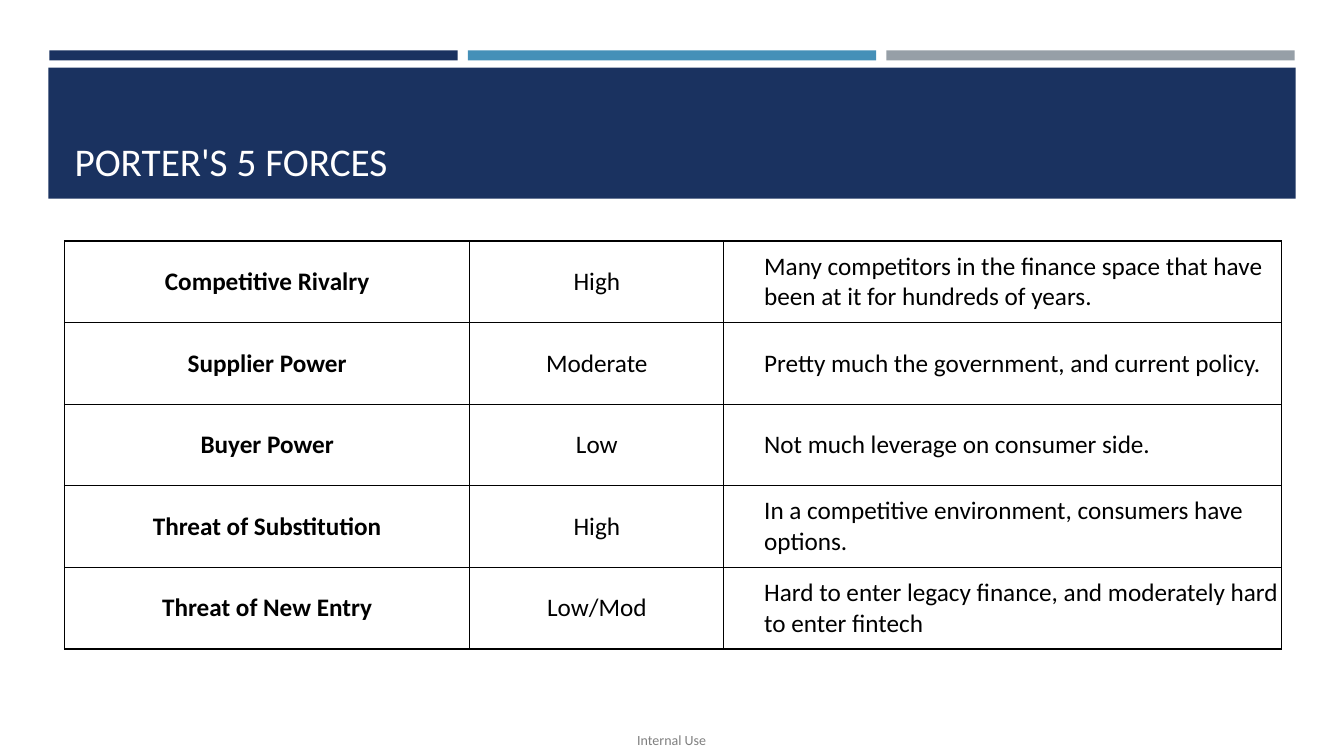
import pptx
import pptx.dml.color
import pptx.enum.shapes
import pptx.enum.text
import pptx.oxml
import pptx.oxml.ns
import pptx.util

Inches = pptx.util.Inches
RGBColor = pptx.dml.color.RGBColor
Align = pptx.enum.text.PP_ALIGN
Anchor = pptx.enum.text.MSO_ANCHOR

NAVY = RGBColor(0x1A, 0x32, 0x60)
BLUE = RGBColor(0x45, 0x90, 0xB8)
SILVER = RGBColor(0x96, 0x9F, 0xA7)
GRAY = RGBColor(0x7F, 0x7F, 0x7F)
BLACK = RGBColor(0, 0, 0)
WHITE = RGBColor(0xFF, 0xFF, 0xFF)

TITLE = "PORTER'S 5 FORCES"
FOOTER = "Internal Use"
FORCES = [
    ("Competitive Rivalry", "High",
     "Many competitors in the finance space that have been at it for hundreds of years."),
    ("Supplier Power", "Moderate", "Pretty much the government, and current policy."),
    ("Buyer Power", "Low", "Not much leverage on consumer side."),
    ("Threat of Substitution", "High",
     "In a competitive environment, consumers have options."),
    ("Threat of New Entry", "Low/Mod",
     "Hard to enter legacy finance, and moderately hard to enter fintech"),
]
# width, alignment, left margin, bold
COLUMNS = [
    (4.02, Align.CENTER, 0, True),
    (2.52, Align.CENTER, 0, False),
    (5.53, Align.LEFT, 0.4, False),
]
ROW = 0.81
STRIPES = [NAVY, BLUE, SILVER]


def write(frame, text, size=18, color=BLACK, bold=False, align=Align.LEFT):
    para = frame.paragraphs[0]
    para.alignment = align
    run = para.add_run()
    run.text = text
    font = run.font
    font.name, font.size, font.bold = "Calibri", pptx.util.Pt(size), bold
    font.color.rgb = color


def bar(slide, color, *box):
    shape = slide.shapes.add_shape(
        pptx.enum.shapes.MSO_SHAPE.RECTANGLE, *map(Inches, box))
    shape.shadow.inherit = False
    shape.fill.solid()
    shape.fill.fore_color.rgb = color
    shape.line.fill.background()


def border(cell):
    props = cell._tc.get_or_add_tcPr()
    for side in ("lnL", "lnR", "lnT", "lnB"):
        props.append(pptx.oxml.parse_xml(
            f'<a:{side} {pptx.oxml.ns.nsdecls("a")} w="12700"><a:solidFill>'
            f'<a:srgbClr val="{BLACK}"/></a:solidFill></a:{side}>'))


def head(slide):
    for i, color in enumerate(STRIPES):
        bar(slide, color, 0.49 + 4.15 * i, 0.5, 4.05, 0.1)
    bar(slide, NAVY, 0.48, 0.67, 12.37, 1.3)
    title = slide.shapes.title
    title.left, title.top, title.width, title.height = map(
        Inches, (0.64, 0.77, 12.06, 1.11))
    frame = title.text_frame
    frame.auto_size = pptx.enum.text.MSO_AUTO_SIZE.NONE
    frame.vertical_anchor = Anchor.BOTTOM
    write(frame, TITLE, size=28, color=WHITE)
    slide.shapes._spTree.append(title._element)  # in front of the band


def grid(slide):
    width = sum(col[0] for col in COLUMNS)
    table = slide.shapes.add_table(
        len(FORCES), len(COLUMNS), Inches(0.64), Inches(2.39),
        Inches(width), Inches(ROW * len(FORCES))).table
    table.first_row = table.horz_banding = False
    for c, (width, align, left, bold) in enumerate(COLUMNS):
        table.columns[c].width = Inches(width)
        for r, force in enumerate(FORCES):
            table.rows[r].height = Inches(ROW)
            cell = table.cell(r, c)
            border(cell)
            cell.fill.background()
            cell.vertical_anchor = Anchor.MIDDLE
            cell.margin_left = Inches(left)
            cell.margin_right = cell.margin_top = cell.margin_bottom = 0
            write(cell.text_frame, force[c], bold=bold, align=align)


def foot(slide):
    frame = slide.shapes.add_textbox(
        *map(Inches, (6.32, 7.26, 0.72, 0.17))).text_frame
    frame.margin_left = frame.margin_right = 0
    frame.margin_top = frame.margin_bottom = 0
    frame.word_wrap = False
    write(frame, FOOTER, size=10, color=GRAY)


def main():
    deck = pptx.Presentation()
    deck.slide_width, deck.slide_height = Inches(13.33), Inches(7.5)
    slide = deck.slides.add_slide(deck.slide_layouts[5])
    head(slide)
    grid(slide)
    foot(slide)
    deck.save("out.pptx")


if __name__ == "__main__":
    main()
